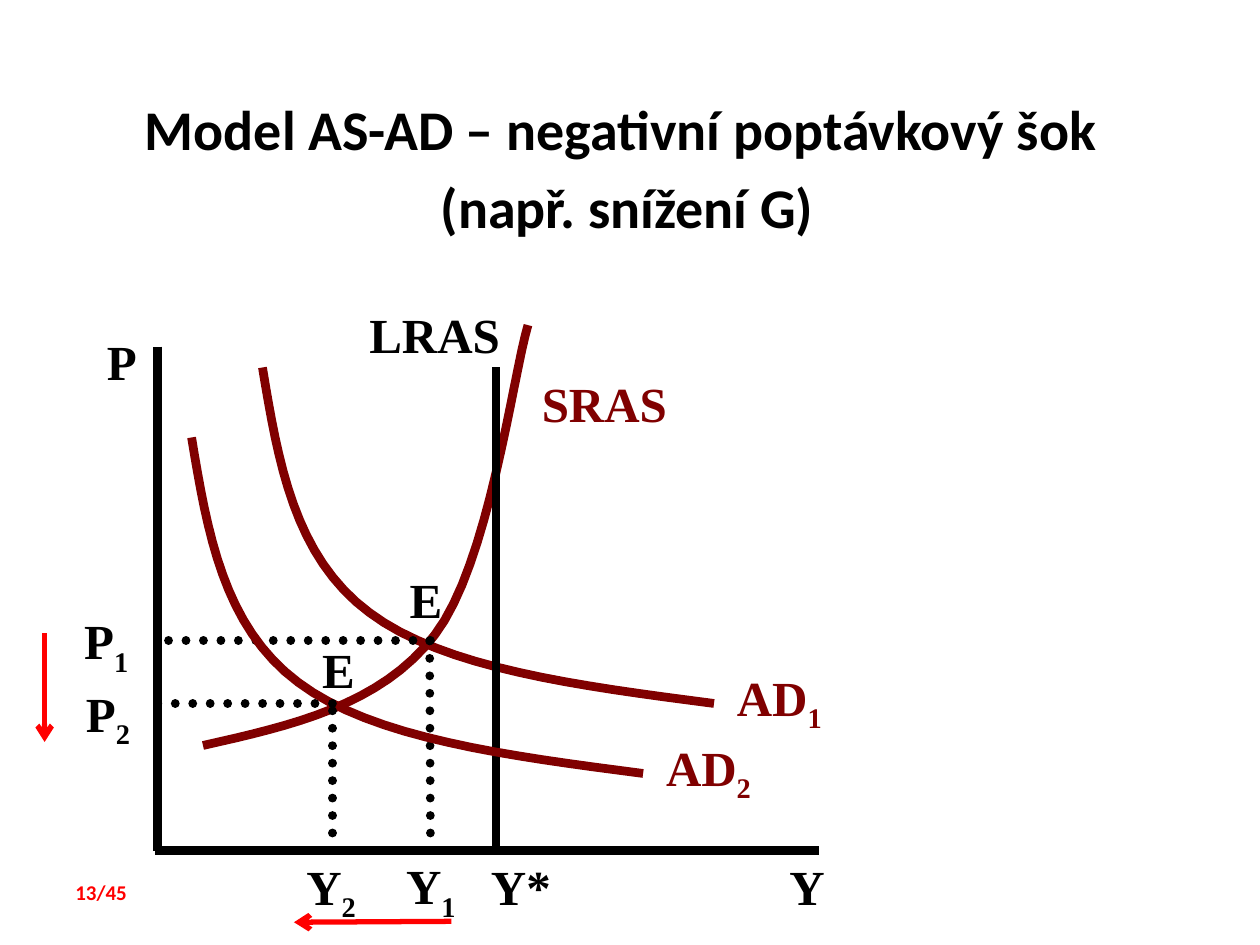
"""Builds the AS-AD slide showing a negative demand shock."""
from lxml import etree
from pptx import Presentation
from pptx.dml.color import RGBColor
from pptx.enum.dml import MSO_LINE
from pptx.enum.shapes import MSO_CONNECTOR
from pptx.enum.text import MSO_AUTO_SIZE, PP_ALIGN
from pptx.oxml.ns import qn
from pptx.util import Pt

STRAIGHT = MSO_CONNECTOR.STRAIGHT
DOTTED = MSO_LINE.ROUND_DOT
FIT_SHAPE = MSO_AUTO_SIZE.SHAPE_TO_FIT_TEXT
LEFT, CENTER = PP_ALIGN.LEFT, PP_ALIGN.CENTER

COLORS = {"black": "000000", "maroon": "800000", "red": "FF0000"}
LABEL_FORMAT = {"name": "Times New Roman", "size": Pt(28), "bold": True}
TITLE_FORMAT = {"name": "Calibri", "size": Pt(32), "bold": True}
NUMBER_FORMAT = {"name": "Calibri", "size": Pt(12), "bold": True}
LABEL_HEIGHT = 41
CURVE_STEPS = 16

TITLE = ["Model AS-AD – negativní poptávkový šok ", "(např. snížení G)"]
PAGE_NUMBER = "13/45"

DEMAND = [(150, 210), (159, 264), (168, 318), (211, 350),
          (253.5, 382), (331, 392), (408, 402)]
DEMAND_SHIFT = (-40.5, 40)
SHIFTED_DEMAND = [(x + DEMAND_SHIFT[0], y + DEMAND_SHIFT[1]) for x, y in DEMAND]
SUPPLY = [(116, 426), (166.3, 414.7), (217.4, 403.2), (248.4, 362.9),
          (279.4, 322.6), (293, 215.3), (301.7, 185.8)]

STROKES = [
    ("axis", [(90, 198), (90, 486)]),
    ("line", [(88.5, 486), (468, 486)]),
    ("curve", DEMAND),
    ("curve", SUPPLY),
    ("dots", [(246, 366), (90, 366)]),
    ("line", [(283.5, 486), (283.5, 210)]),
    ("dots", [(246, 486), (245.5, 362)]),
    ("curve", SHIFTED_DEMAND),
    ("dots", [(190, 402), (88.5, 402)]),
    ("dots", [(190, 486), (190, 404.5)]),
    ("arrow", [(25.5, 362), (25.5, 424)]),
    ("arrow", [(258, 526.5), (168, 527)]),
]
STROKE_STYLES = {
    "axis": ("black", 5.5),
    "line": ("black", 5),
    "curve": ("maroon", 5),
    "dots": ("black", 5),
    "arrow": ("red", 3),
}

LABELS = [
    ("P", "", "black", 54, 186, 48),
    ("Y", "", "black", 444, 486, 48),
    ("AD", "1", "maroon", 414, 378, 84),
    ("AD", "2", "maroon", 373.5, 418, 84),
    ("SRAS", "", "maroon", 302.5, 210, 108),
    ("LRAS", "", "black", 204, 170.5, 108),
    ("P", "1", "black", 41, 345.5, 48),
    ("P", "2", "black", 42, 387, 48),
    ("Y", "1", "black", 225, 485.5, 66),
    ("Y", "2", "black", 168, 486, 66),
    ("Y*", "", "black", 273.5, 486, 66),
    ("E", "", "black", 227, 322, 48),
    ("E", "", "black", 177, 362, 48),
]


def bezier_points(controls):
    """Sample a chain of cubic Bezier segments."""
    points = [controls[0]]
    for start in range(0, len(controls) - 1, 3):
        segment = controls[start:start + 4]
        for step in range(1, CURVE_STEPS + 1):
            t = step / CURVE_STEPS
            weights = ((1 - t) ** 3, 3 * t * (1 - t) ** 2, 3 * t * t * (1 - t), t ** 3)
            points.append(tuple(
                sum(weight * point[axis] for weight, point in zip(weights, segment))
                for axis in (0, 1)))
    return points


def add_stroke(slide, kind, points):
    """Draw a straight line, a dotted guide, an arrow or a curve."""
    color, width = STROKE_STYLES[kind]
    if kind == "curve":
        start, *rest = [(Pt(x), Pt(y)) for x, y in bezier_points(points)]
        builder = slide.shapes.build_freeform(*start)
        builder.add_line_segments(rest, close=False)
        shape = builder.convert_to_shape()
        shape.fill.background()
        shape.shadow.inherit = False
    else:
        ends = [Pt(value) for point in points for value in point]
        shape = slide.shapes.add_connector(STRAIGHT, *ends)
    shape.line.color.rgb = RGBColor.from_string(COLORS[color])
    shape.line.width = Pt(width)
    properties = shape._element.spPr
    outline = properties.find(qn("a:ln"))
    if kind == "dots":
        shape.line.dash_style = DOTTED
        outline.set("cap", "rnd")
    if kind == "arrow":
        etree.SubElement(outline, qn("a:tailEnd"), type="arrow")
    if kind != "curve":
        etree.SubElement(properties, qn("a:effectLst"))


def add_text(slide, box, paragraphs, format_values, color, alignment=LEFT):
    """Add a text box; each paragraph is a pair of text and subscript."""
    frame = slide.shapes.add_textbox(*(Pt(value) for value in box)).text_frame
    frame.word_wrap = True
    frame.auto_size = FIT_SHAPE
    for index, (text, subscript) in enumerate(paragraphs):
        paragraph = frame.add_paragraph() if index else frame.paragraphs[0]
        paragraph.alignment = alignment
        if index:
            paragraph.space_before = Pt(6)
        for part in filter(None, (text, subscript)):
            run = paragraph.add_run()
            run.text = part
            for name, value in format_values.items():
                setattr(run.font, name, value)
            run.font.color.rgb = RGBColor.from_string(COLORS[color])
        if subscript:
            run._r.get_or_add_rPr().set("baseline", "-25000")


def main():
    """Build and save the presentation."""
    presentation = Presentation()
    presentation.slide_width, presentation.slide_height = Pt(720), Pt(540)
    slide = presentation.slides.add_slide(presentation.slide_layouts[6])
    for kind, points in STROKES:
        add_stroke(slide, kind, points)
    for text, subscript, color, left, top, width in LABELS:
        add_text(slide, (left, top, width, LABEL_HEIGHT), [(text, subscript)],
                 LABEL_FORMAT, color)
    add_text(slide, (0, 50.5, 717, 91), [(line, "") for line in TITLE],
             TITLE_FORMAT, "black", CENTER)
    add_text(slide, (36, 499, 66, 22), [(PAGE_NUMBER, "")], NUMBER_FORMAT, "red")
    presentation.save("out.pptx")


if __name__ == "__main__":
    main()
